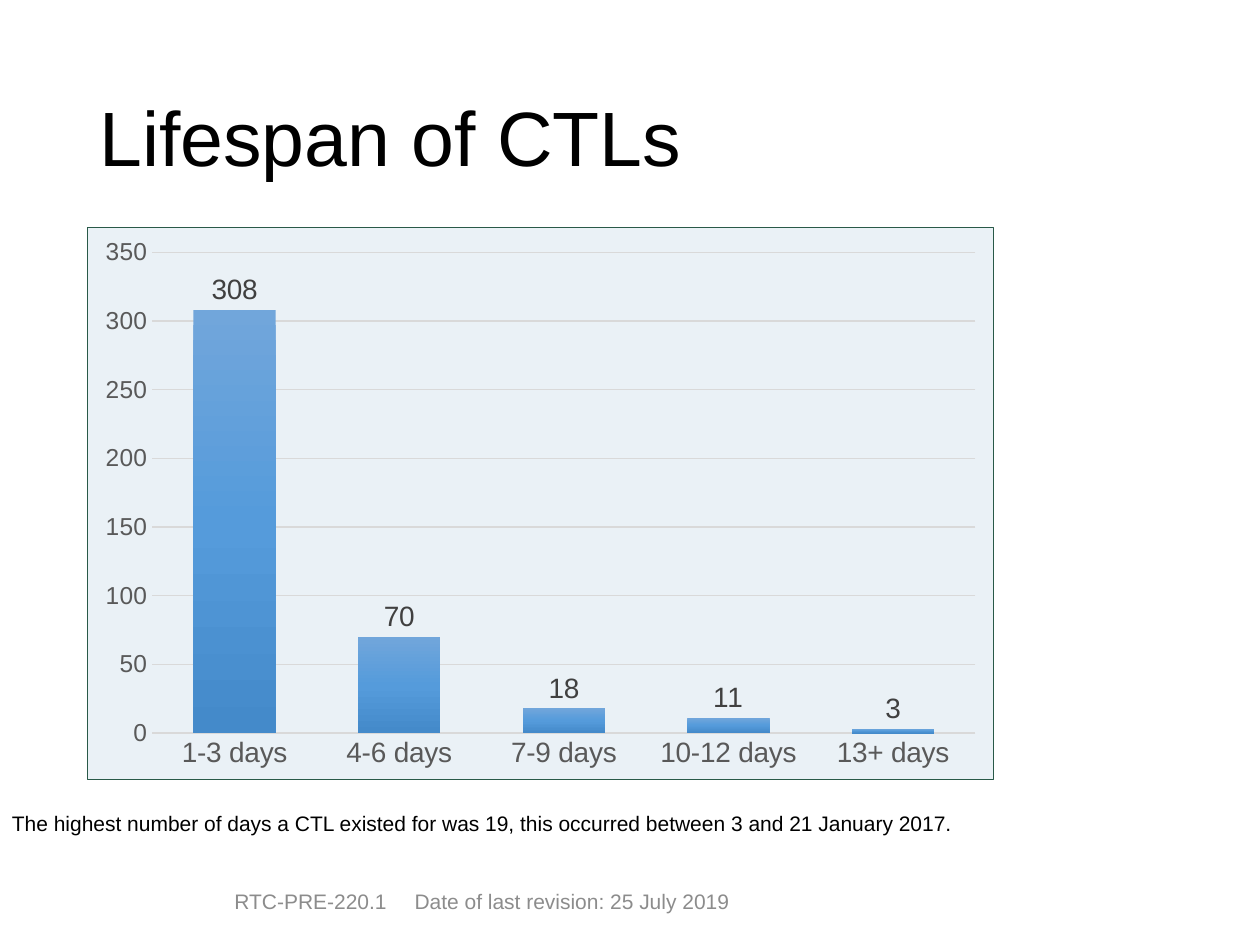
"""Build a slide with a column chart of CTL lifespans."""
from dataclasses import dataclass

from lxml import etree
from pptx import Presentation
from pptx import util as u
from pptx.chart.data import CategoryChartData
from pptx.dml.color import RGBColor
from pptx.enum import chart as charts, text
from pptx.oxml import parse_xml
from pptx.oxml.ns import nsdecls, qn

TITLE = "Lifespan of CTLs"
CAPTION = ("The highest number of days a CTL existed for was 19, "
           "this occurred between 3 and 21 January 2017.")
FOOTER = "RTC-PRE-220.1\tDate of last revision: 25 July 2019"
LIFESPANS = {"1-3 days": 308, "4-6 days": 70, "7-9 days": 18, "10-12 days": 11, "13+ days": 3}
WIDTH, HEIGHT = u.Inches(10), u.Inches(7.5)
AREAS = {
    "title": (6.9, 5.33, 86.2, 19.33),
    "chart": (6.9, 24, 72, 58.53),
    "caption": (-8.5, 85.47, 93.6, 7.2),
    "footer": (6.9, 92.67, 62.8, 5.33),
}
FOOTER_INSET, FOOTER_TAB = 11.7, 14.3


@dataclass(frozen=True)
class Theme:
    font: str = "Arial"
    ink: str = "000000"
    muted: str = "8C8C8C"
    axis: str = "595959"
    label: str = "404040"
    grid: str = "D9D9D9"
    panel: str = "EAF1F6"
    border: str = "295948"
    columns: tuple = ((0, "71A6DB"), (50, "559BDB"), (100, "448ACA"))
    title_size: int = 44
    label_size: int = 16
    value_size: int = 14
    small_size: int = 12


THEME = Theme()


def place(name):
    """Turn percentages of the slide into a position and size."""
    return [int(share * side / 100) for share, side in zip(AREAS[name], (WIDTH, HEIGHT) * 2)]


def style(font, size, color):
    font.name, font.size = THEME.font, u.Pt(size)
    font.color.rgb = RGBColor.from_string(color)


def add_text(slide, name, content, *, size=THEME.small_size, color=THEME.ink, align=None,
             anchor=text.MSO_ANCHOR.TOP, spacing=None, inset=None, tab=None):
    """Add a formatted text box in a named area."""
    frame = slide.shapes.add_textbox(*place(name)).text_frame
    frame.word_wrap = True
    frame.vertical_anchor = anchor
    if inset is not None:
        frame.margin_left = int(WIDTH * inset / 100)
    paragraph = frame.paragraphs[0]
    paragraph.alignment, paragraph.line_spacing = align, spacing
    if tab is not None:
        tabs = etree.SubElement(paragraph._p.get_or_add_pPr(), qn("a:tabLst"))
        etree.SubElement(tabs, qn("a:tab"), pos=str(int(WIDTH * tab / 100)), algn="l")
    run = paragraph.add_run() if tab is None else None
    if run is None:
        paragraph.text = content
    else:
        run.text = content
    for run in paragraph.runs:
        style(run.font, size, color)


def solid(color):
    return f'<a:solidFill><a:srgbClr val="{color}"/></a:solidFill>'


def shape_properties(fill, line):
    return parse_xml(f'<c:spPr {nsdecls("c", "a")}>{fill}{line}</c:spPr>')


def add_lifespan_chart(slide):
    """Add the column chart on its bordered panel."""
    data = CategoryChartData()
    data.categories = list(LIFESPANS)
    data.add_series("Series 1", list(LIFESPANS.values()))
    chart = slide.shapes.add_chart(
        charts.XL_CHART_TYPE.COLUMN_CLUSTERED, *place("chart"), data).chart
    chart.has_legend = chart.has_title = False
    style(chart.font, 10, THEME.ink)
    border = f'<a:ln w="{u.Pt(0.75)}">{solid(THEME.border)}</a:ln>'
    chart.element.find(qn("c:chart")).addnext(shape_properties(solid(THEME.panel), border))

    for axis, size in ((chart.category_axis, THEME.label_size),
                       (chart.value_axis, THEME.value_size)):
        axis.major_tick_mark = axis.minor_tick_mark = charts.XL_TICK_MARK.NONE
        style(axis.tick_labels.font, size, THEME.axis)
    chart.value_axis.format.line.fill.background()
    chart.value_axis.minimum_scale, chart.value_axis.maximum_scale = 0, 350
    chart.value_axis.major_unit = 50
    for line, width in ((chart.category_axis.format.line, 1),
                        (chart.value_axis.major_gridlines.format.line, 0.75)):
        line.color.rgb = RGBColor.from_string(THEME.grid)
        line.width = u.Pt(width)

    plot = chart.plots[0]
    plot.gap_width, plot.overlap, plot.vary_by_categories = 100, -24, False
    series = plot.series[0]
    series.format.fill.gradient()
    stops = "".join(f'<a:gs pos="{position * 1000}"><a:srgbClr val="{color}"/></a:gs>'
                    for position, color in THEME.columns)
    gradient = f'<a:gradFill><a:gsLst>{stops}</a:gsLst><a:lin ang="5400000" scaled="0"/></a:gradFill>'
    properties = series.format.fill._xPr
    properties.getparent().replace(
        properties, shape_properties(gradient, "<a:ln><a:noFill/></a:ln>"))
    labels = series.data_labels
    labels.show_value, labels.position = True, charts.XL_LABEL_POSITION.OUTSIDE_END
    style(labels.font, THEME.label_size, THEME.label)


def main():
    presentation = Presentation()
    presentation.slide_width, presentation.slide_height = WIDTH, HEIGHT
    slide = presentation.slides.add_slide(presentation.slide_layouts[6])
    add_text(slide, "title", TITLE, size=THEME.title_size,
             anchor=text.MSO_ANCHOR.MIDDLE, spacing=0.9)
    add_text(slide, "footer", FOOTER, color=THEME.muted, anchor=text.MSO_ANCHOR.MIDDLE,
             inset=FOOTER_INSET, tab=FOOTER_TAB)
    add_lifespan_chart(slide)
    add_text(slide, "caption", CAPTION, align=text.PP_ALIGN.CENTER, spacing=0.9)
    presentation.save("out.pptx")


if __name__ == "__main__":
    main()
